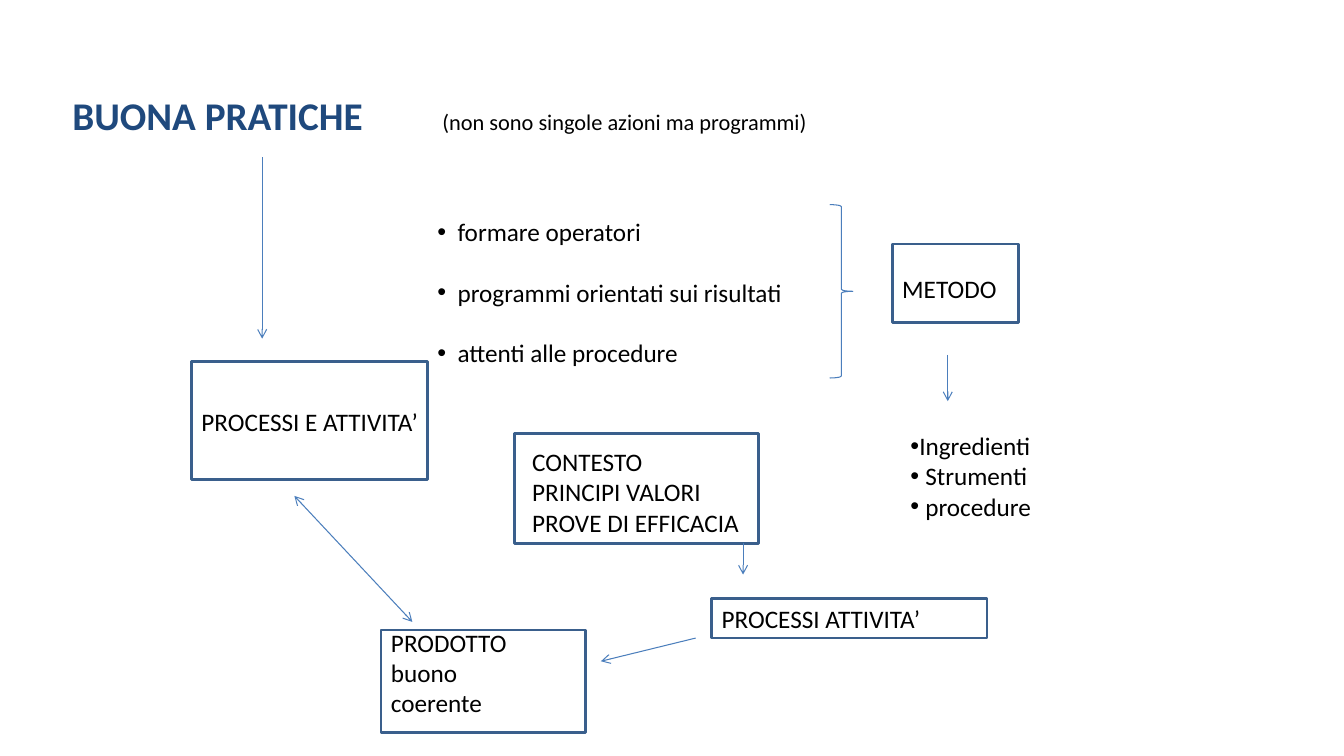
from dataclasses import dataclass

from lxml import etree
from pptx import Presentation
from pptx.dml.color import RGBColor
from pptx.enum.shapes import MSO_CONNECTOR, MSO_SHAPE
from pptx.enum.text import MSO_AUTO_SIZE
from pptx.oxml.ns import qn
from pptx.util import Inches, Pt

RECT = MSO_SHAPE.RECTANGLE
BRACE = MSO_SHAPE.RIGHT_BRACE
LINE = MSO_CONNECTOR.STRAIGHT
GROW = MSO_AUTO_SIZE.SHAPE_TO_FIT_TEXT


@dataclass(frozen=True)
class Theme:
    font: str = "Calibri"
    title: RGBColor = RGBColor(0x1F, 0x49, 0x7D)
    ink: RGBColor = RGBColor(0, 0, 0)
    edge: RGBColor = RGBColor(0x3A, 0x5F, 0x8C)
    thin: RGBColor = RGBColor(0x4B, 0x7E, 0xBC)
    head: int = 28
    body: int = 18
    note: int = 16
    thick: float = 2
    fine: float = 0.75


def add(node, tag, **attrs):
    child = etree.SubElement(node, qn(tag))
    for key, value in attrs.items():
        child.set(key, str(value))
    return child


class Board:
    def __init__(self, slide, theme):
        self.shapes = slide.shapes
        self.theme = theme

    def frame(self, x, y, w, h):
        box = self.shapes.add_textbox(Inches(x), Inches(y), Inches(w), Inches(h))
        text = box.text_frame
        text.word_wrap = True
        text.auto_size = GROW
        return text

    def run(self, para, words, size=None, color=None, bold=False):
        run = para.add_run()
        run.text = words
        font = run.font
        font.name = self.theme.font
        font.size = Pt(size or self.theme.body)
        font.bold = bold
        font.color.rgb = color or self.theme.ink

    def title(self, x, y, w, h, words, note, stop):
        """Write a heading with a note beside it, set off by a tab stop."""
        para = self.frame(x, y, w, h).paragraphs[0]
        tabs = add(para._p.get_or_add_pPr(), "a:tabLst")
        add(tabs, "a:tab", pos=Inches(stop), algn="l")
        self.run(para, words, self.theme.head, self.theme.title, True)
        self.run(para, "\t" + note, self.theme.note)

    def text(self, x, y, w, h, lines, hangs=None, space=None):
        """Write one paragraph a line; hangs gives each bullet's indent."""
        frame = self.frame(x, y, w, h)
        for i, words in enumerate(lines):
            para = frame.add_paragraph() if i else frame.paragraphs[0]
            if hangs:
                props = para._p.get_or_add_pPr()
                props.set("marL", str(Inches(hangs[i])))
                props.set("indent", str(-Inches(hangs[i])))
                add(props, "a:buFont", typeface="Arial")
                add(props, "a:buChar", char="•")
            if space:
                para.line_spacing = space
            self.run(para, words)

    def shape(self, kind, x, y, w, h, color, width):
        item = self.shapes.add_shape(kind, Inches(x), Inches(y), Inches(w), Inches(h))
        item.shadow.inherit = False
        item.fill.background()
        item.line.color.rgb = color
        item.line.width = Pt(width)

    def box(self, x, y, w, h):
        self.shape(RECT, x, y, w, h, self.theme.edge, self.theme.thick)

    def brace(self, x, y, w, h):
        self.shape(BRACE, x, y, w, h, self.theme.thin, self.theme.fine)

    def arrow(self, x1, y1, x2, y2, both=False):
        item = self.shapes.add_connector(
            LINE, Inches(x1), Inches(y1), Inches(x2), Inches(y2))
        item.line.color.rgb = self.theme.thin
        item.line.width = Pt(self.theme.fine)
        line = item.line._get_or_add_ln()
        if both:
            add(line, "a:headEnd", type="arrow")
        add(line, "a:tailEnd", type="arrow")
        add(item._element.spPr, "a:effectLst")


def main():
    deck = Presentation()
    deck.slide_width, deck.slide_height = Inches(13.33), Inches(7.5)
    board = Board(deck.slides.add_slide(deck.slide_layouts[6]), Theme())

    board.title(0.62, 0.86, 11.53, 0.57, "BUONA PRATICHE",
                "(non sono singole azioni ma programmi)", 3.67)
    board.text(4.24, 1.8, 4.22, 1.92,
               ["formare operatori", "programmi orientati sui risultati",
                "attenti alle procedure"], [0.2] * 3, 2.0)
    board.brace(8.23, 2.03, 0.23, 1.72)

    board.text(8.85, 2.66, 1.64, 0.4, ["METODO"])
    board.box(8.85, 2.42, 1.25, 0.78)
    board.arrow(9.4, 3.52, 9.4, 3.98)
    board.text(8.93, 4.22, 1.64, 1.01,
               ["Ingredienti", "Strumenti", "procedure"], [0.09, 0.15, 0.15])

    board.arrow(2.6, 1.56, 2.6, 3.36)
    board.box(1.9, 3.59, 2.34, 1.17)
    board.text(1.9, 3.98, 3.28, 0.4, ["PROCESSI E ATTIVITA’"])

    board.box(5.1, 4.3, 2.42, 1.09)
    board.text(5.18, 4.38, 2.42, 1.01,
               ["CONTESTO", "PRINCIPI VALORI", "PROVE DI EFFICACIA"])
    board.arrow(7.37, 5.39, 7.37, 5.7)

    board.box(7.06, 5.94, 2.73, 0.39)
    board.text(7.06, 5.94, 3.27, 0.4, ["PROCESSI ATTIVITA’"])
    board.arrow(6.9, 6.33, 5.96, 6.56)

    board.box(3.78, 6.25, 2.03, 1.02)
    board.text(3.78, 6.17, 2.03, 1.01, ["PRODOTTO", "buono", "coerente"])
    board.arrow(2.92, 4.92, 4.09, 6.17, both=True)

    deck.save("out.pptx")


if __name__ == "__main__":
    main()
